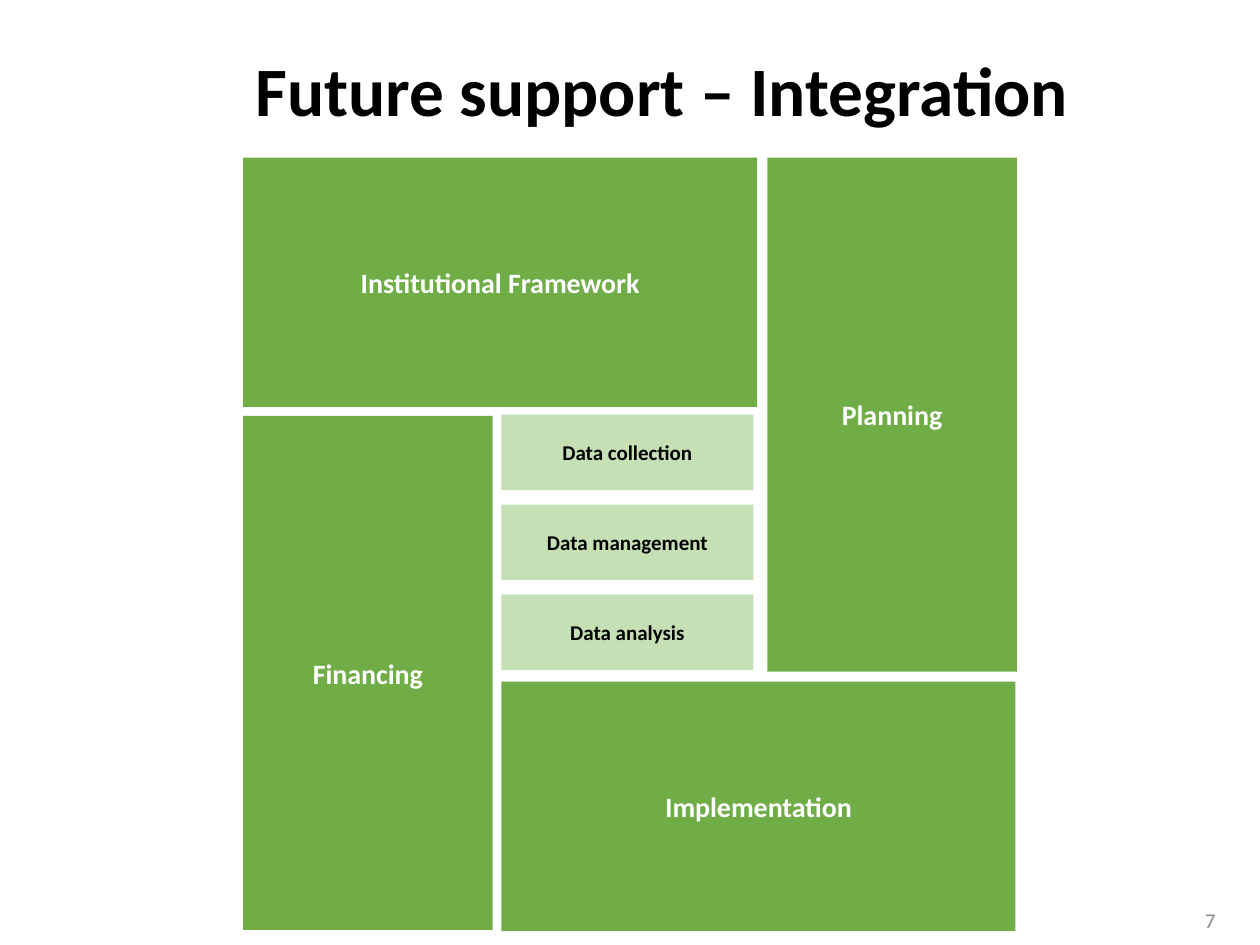
from pptx import Presentation
from pptx import util as u
from pptx.dml.color import RGBColor
from pptx.enum import shapes, text

GREEN = RGBColor(0x70, 0xAD, 0x47)
PALE_GREEN = RGBColor(0xC5, 0xE0, 0xB4)
WHITE = RGBColor(0xFF, 0xFF, 0xFF)
BLACK = RGBColor(0x00, 0x00, 0x00)
GREY = RGBColor(0x8C, 0x8C, 0x8C)


def write(holder, words, size, color, bold=True, align=text.PP_ALIGN.CENTER, spacing=1.0):
    frame = holder.text_frame
    frame.word_wrap = True
    frame.vertical_anchor = text.MSO_ANCHOR.MIDDLE
    paragraph = frame.paragraphs[0]
    paragraph.alignment = align
    paragraph.line_spacing = spacing
    run = paragraph.add_run()
    run.text = words
    run.font.name = "Calibri"
    run.font.size = u.Pt(size)
    run.font.bold = bold
    run.font.color.rgb = color


def add_block(group, left, top, width, height, fill):
    block = group.shapes.add_shape(
        shapes.MSO_SHAPE.RECTANGLE,
        u.Inches(left), u.Inches(top), u.Inches(width), u.Inches(height))
    block.shadow.inherit = False
    block.fill.solid()
    block.fill.fore_color.rgb = fill
    block.line.fill.background()
    return block


prs = Presentation()
prs.slide_width = u.Inches(10)
prs.slide_height = u.Inches(7.5)
slide = prs.slides.add_slide(prs.slide_layouts[6])

heading = slide.shapes.add_textbox(u.Inches(1.93), u.Inches(0.4), u.Inches(8.07), u.Inches(0.69))
write(heading, "Future support – Integration", 39.6, BLACK,
      align=text.PP_ALIGN.LEFT, spacing=0.9)

LONG, SHORT = 4.08, 1.98
pinwheel = slide.shapes.add_group_shape()
for words, left, top, width, height in [
    ("Institutional Framework", 1.93, 1.25, LONG, SHORT),
    ("Implementation", 3.98, 5.41, LONG, SHORT),
    ("Financing", 1.93, 3.3, SHORT, LONG),
    ("Planning", 6.09, 1.25, SHORT, LONG),
]:
    write(add_block(pinwheel, left, top, width, height, GREEN), words, 16, WHITE)

data_steps = slide.shapes.add_group_shape()
for row, words in enumerate(["Data collection", "Data management", "Data analysis"]):
    step = add_block(data_steps, 3.98, 3.29 + row * 0.715, 2, 0.6, PALE_GREEN)
    step.text_frame.margin_left = step.text_frame.margin_right = 0
    write(step, words, 12, BLACK)

page_number = slide.shapes.add_textbox(u.Inches(9.21), u.Inches(7.11), u.Inches(0.79), u.Inches(0.39))
write(page_number, "7", 12, GREY, bold=False)

prs.save("out.pptx")
